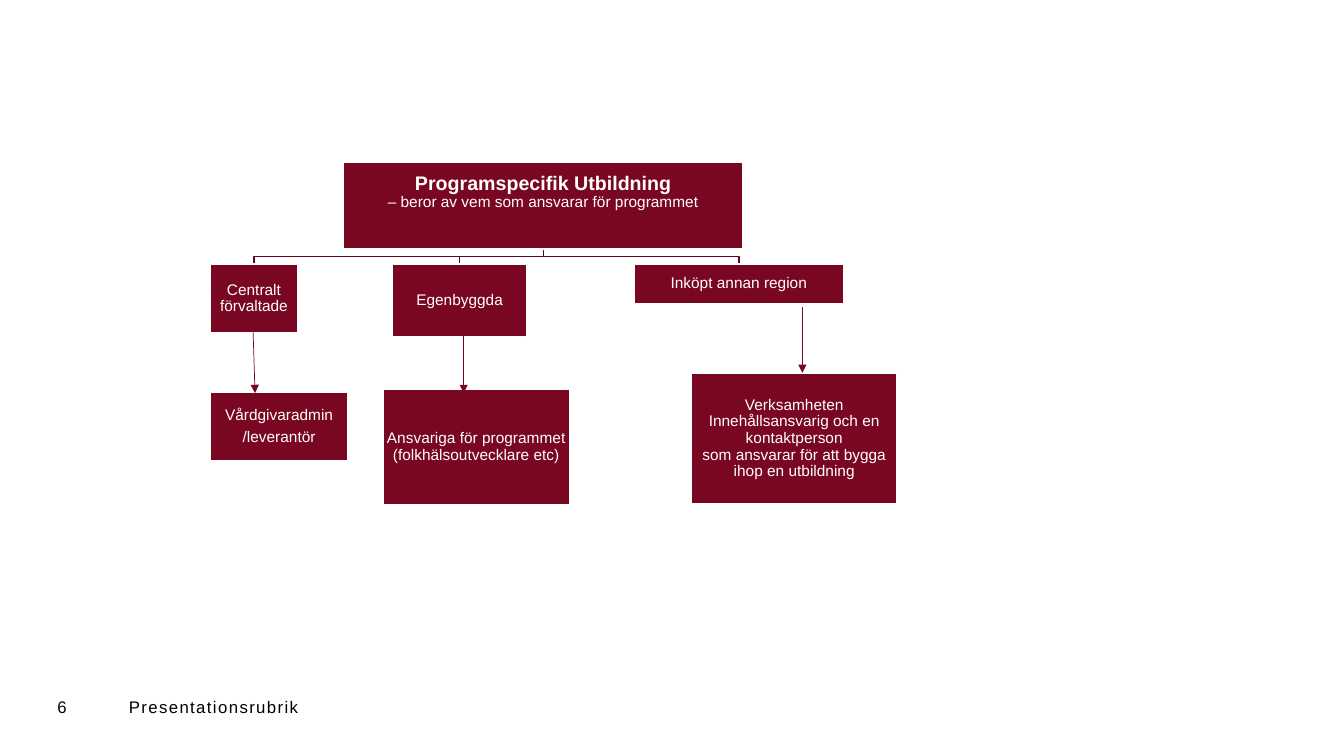
from dataclasses import dataclass

from lxml.etree import SubElement
from pptx import Presentation
from pptx.dml.color import RGBColor
from pptx.enum.shapes import MSO_CONNECTOR, MSO_SHAPE
from pptx.enum.text import MSO_ANCHOR, PP_ALIGN
from pptx.oxml.ns import qn
from pptx.slide import Slide
from pptx.text.text import TextFrame
from pptx.util import Inches, Pt

COLORS = {"box": "790721", "branch": "61061A", "edge": "FFFFFF",
          "box_text": "FFFFFF", "footer": "000000"}
FONT = "Arial"
CELL = 0.1
SLIDE_COLUMNS, SLIDE_ROWS = 133.33, 75
INSET = 0.1


@dataclass(frozen=True)
class Node:
    column: float
    row: float
    columns: float
    rows: float
    lines: tuple[str, ...]


@dataclass(frozen=True)
class Arrow:
    start: tuple[float, float]
    end: tuple[float, float]


@dataclass(frozen=True)
class Footer:
    column: float
    columns: float
    text: str
    spacing: int


ROOT = Node(34.1, 16.1, 39.6, 8.6, (
    "Programspecifik Utbildning\v– beror av vem som ansvarar för programmet",))
CATEGORIES = [
    Node(20.9, 26.2, 8.6, 6.8, ("Centralt förvaltade",)),
    Node(38.9, 26.2, 13.4, 7.2, ("Egenbyggda",)),
    Node(62.9, 26.2, 20.8, 3.9, ("Inköpt annan region",)),
]
OWNERS = [
    Node(38, 38.6, 18.5, 11.5, ("Ansvariga för programmet (folkhälsoutvecklare etc)",)),
    Node(68.6, 37, 20.4, 13, (
        "Verksamheten Innehållsansvarig och en kontaktperson\v"
        "som ansvarar för att bygga ihop en utbildning",)),
    Node(20.9, 38.9, 13.6, 6.8, ("Vårdgivaradmin", "/leverantör")),
]
ARROWS = [
    Arrow((25.1, 32.6), (25.3, 39)),
    Arrow((46, 32.6), (46, 39)),
    Arrow((79.6, 30.5), (79.6, 37)),
]
FOOTERS = [Footer(11.8, 39.4, "Presentationsrubrik", 100), Footer(4.7, 5.7, "6", 0)]
FOOTER_ROW, FOOTER_ROWS = 68.1, 4


def cells(count: float) -> int:
    return Inches(count * CELL)


def color(name: str) -> RGBColor:
    return RGBColor.from_string(COLORS[name])


def set_insets(frame: TextFrame, inset: float) -> None:
    frame.margin_left = frame.margin_right = cells(inset)
    frame.margin_top = frame.margin_bottom = cells(inset)


def draw_node(page: Slide, node: Node) -> TextFrame:
    box = page.shapes.add_shape(
        MSO_SHAPE.RECTANGLE, cells(node.column), cells(node.row),
        cells(node.columns), cells(node.rows))
    box.shadow.inherit = False
    box.fill.solid()
    box.fill.fore_color.rgb = color("box")
    box.line.color.rgb = color("edge")
    box.line.width = Pt(1)
    frame = box.text_frame
    frame.word_wrap = True
    frame.vertical_anchor = MSO_ANCHOR.MIDDLE
    set_insets(frame, INSET)
    for index, line in enumerate(node.lines):
        para = frame.add_paragraph() if index else frame.paragraphs[0]
        para.text = line
        para.alignment = PP_ALIGN.CENTER
        para.line_spacing = 0.9
        para.space_after = Pt(4)
        para.font.name = FONT
        para.font.size = Pt(11)
        para.font.color.rgb = color("box_text")
    return frame


def draw_root(page: Slide) -> None:
    frame = draw_node(page, ROOT)
    frame.vertical_anchor = MSO_ANCHOR.TOP
    frame.margin_top = cells(1.1)
    heading = frame.paragraphs[0].runs[0]
    heading.font.size = Pt(14)
    heading.font.bold = True


def draw_branch(page: Slide, child: Node) -> None:
    trunk = ROOT.column + ROOT.columns / 2
    target = child.column + child.columns / 2
    top = ROOT.row + ROOT.rows
    middle = (top + child.row) / 2
    points = [(trunk, middle), (target, middle), (target, child.row)]
    builder = page.shapes.build_freeform(cells(trunk), cells(top))
    builder.add_line_segments([(cells(x), cells(y)) for x, y in points], close=False)
    branch = builder.convert_to_shape()
    branch.shadow.inherit = False
    branch.fill.background()
    branch.line.color.rgb = color("branch")
    branch.line.width = Pt(1)


def draw_arrow(page: Slide, arrow: Arrow) -> None:
    connector = page.shapes.add_connector(
        MSO_CONNECTOR.STRAIGHT, *map(cells, arrow.start), *map(cells, arrow.end))
    connector.line.color.rgb = color("box")
    connector.line.width = Pt(0.5)
    SubElement(connector.line._get_or_add_ln(), qn("a:tailEnd"), type="triangle")
    SubElement(connector._element.spPr, qn("a:effectLst"))


def draw_footer(page: Slide, footer: Footer) -> None:
    box = page.shapes.add_textbox(
        cells(footer.column), cells(FOOTER_ROW), cells(footer.columns), cells(FOOTER_ROWS))
    frame = box.text_frame
    frame.word_wrap = True
    frame.vertical_anchor = MSO_ANCHOR.MIDDLE
    para = frame.paragraphs[0]
    span = para.add_run()
    span.text = footer.text
    span._r.get_or_add_rPr().set("spc", str(footer.spacing))
    para.font.name = FONT
    para.font.size = Pt(12)
    para.font.color.rgb = color("footer")


def main() -> None:
    deck = Presentation()
    deck.slide_width, deck.slide_height = cells(SLIDE_COLUMNS), cells(SLIDE_ROWS)
    page = deck.slides.add_slide(deck.slide_layouts[6])
    for category in reversed(CATEGORIES):
        draw_branch(page, category)
    draw_root(page)
    for node in CATEGORIES + OWNERS:
        draw_node(page, node)
    for footer in FOOTERS:
        draw_footer(page, footer)
    for arrow in ARROWS:
        draw_arrow(page, arrow)
    deck.save("out.pptx")


if __name__ == "__main__":
    main()
